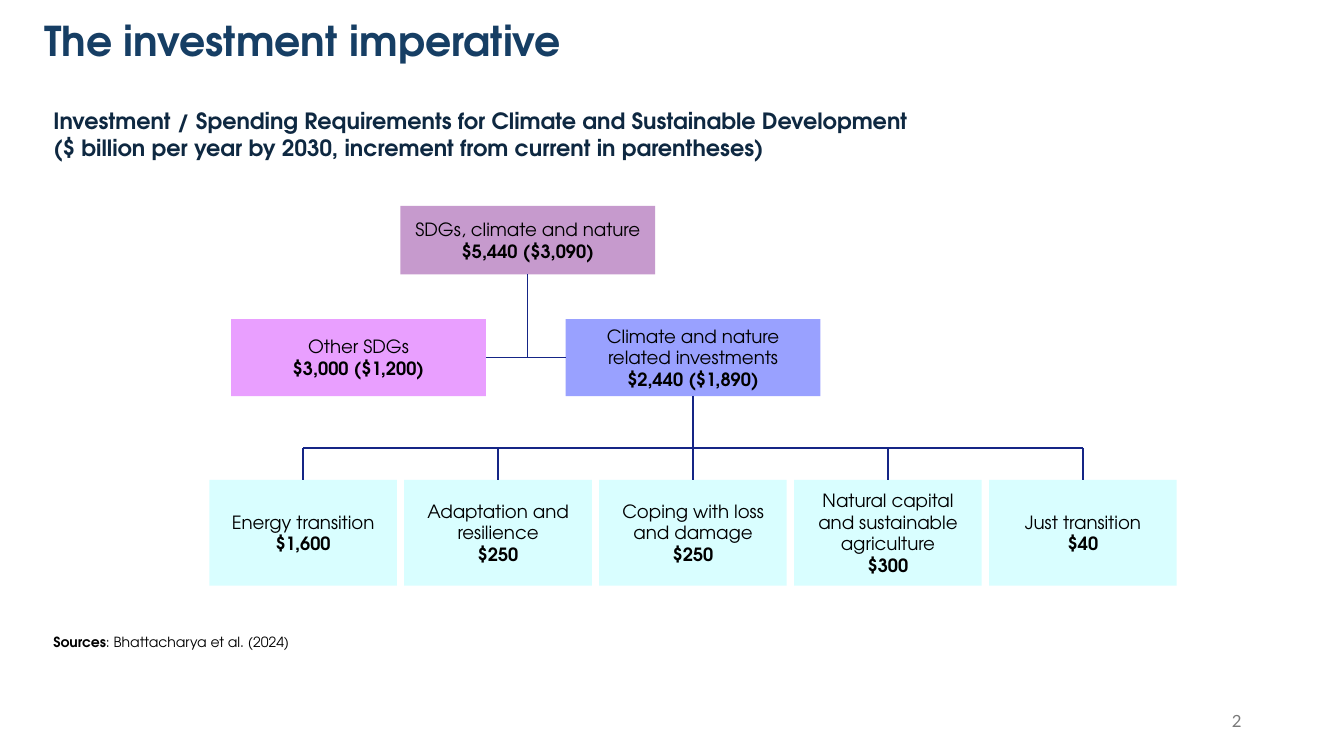
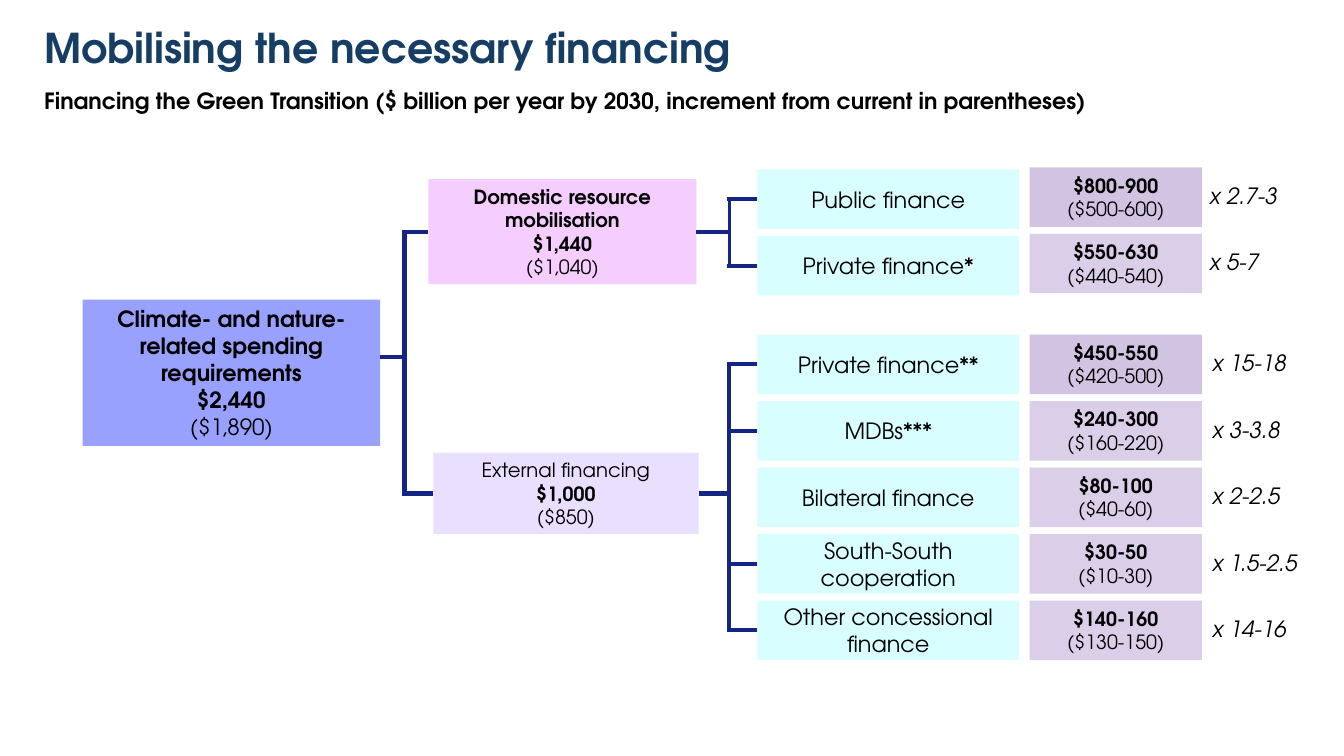
"""Build two slides on climate investment needs and their financing."""
from lxml import etree
from pptx import Presentation
from pptx.dml.color import RGBColor
from pptx.enum.shapes import MSO_CONNECTOR, MSO_SHAPE
from pptx.enum.text import MSO_ANCHOR, MSO_AUTO_SIZE, PP_ALIGN
from pptx.oxml.ns import qn
from pptx.util import Pt

RECT, STRAIGHT = MSO_SHAPE.RECTANGLE, MSO_CONNECTOR.STRAIGHT
LEFT, CENTER, RIGHT = PP_ALIGN.LEFT, PP_ALIGN.CENTER, PP_ALIGN.RIGHT
TOP, MIDDLE = MSO_ANCHOR.TOP, MSO_ANCHOR.MIDDLE
BOTTOM_SIDE, LEFT_SIDE, RIGHT_SIDE, TOP_SIDE = 2, 1, 3, 0

COLORS = {
    "title": "163E64", "subtitle": "0E2841", "text": "000000",
    "number": "797979", "line": "152586", "blue": "0015FF",
    "plum": "720384", "magenta": "C90FFF", "cyan": "4DFBFF",
    "pink": "D83CFF", "lilac": "AB82FF", "purple": "521B93",
}
FONT, NUMBER_FONT = "TeX Gyre Adventor", "Lato"
PLAIN, BOLD, ITALIC = {"bold": False}, {"bold": True}, {"italic": True}


def box(s, at, paragraphs, size, fill=None, alpha=100, align=CENTER,
        anchor=MIDDLE, color="text", font=FONT):
    at = [Pt(v) for v in at]
    if fill:
        sp = s.shapes.add_shape(RECT, *at)
        sp.shadow.inherit = False
        sp.line.fill.background()
        sp.fill.solid()
        sp.fill.fore_color.rgb = RGBColor.from_string(COLORS[fill])
        srgb = sp.fill._xPr.find(".//" + qn("a:srgbClr"))
        etree.SubElement(srgb, qn("a:alpha"), val=str(alpha * 1000))
    else:
        sp = s.shapes.add_textbox(*at)
    tf = sp.text_frame
    tf.word_wrap = True
    tf.vertical_anchor = anchor
    for i, runs in enumerate(paragraphs):
        p = tf.add_paragraph() if i else tf.paragraphs[0]
        p.alignment = align
        for text, style in runs:
            r = p.add_run()
            r.text = text
            r.font.color.rgb = RGBColor.from_string(COLORS[color])
            for key, value in {"name": font, "size": Pt(size), **style}.items():
                setattr(r.font, key, value)
    return sp


def connect(s, start, end, width, begin=None, finish=None):
    line = s.shapes.add_connector(STRAIGHT, *[Pt(v) for v in (*start, *end)])
    line.line.color.rgb = RGBColor.from_string(COLORS["line"])
    line.line.width = Pt(width)
    etree.SubElement(line._element.spPr, qn("a:effectLst"))
    if begin:
        line.begin_connect(*begin)
    if finish:
        line.end_connect(*finish)


prs = Presentation()
prs.slide_width, prs.slide_height = Pt(960), Pt(540)

slides = []
for title, top in [("The investment imperative", 11.5),
                   ("Mobilising the necessary financing", 16.5)]:
    s = prs.slides.add_slide(prs.slide_layouts[5])
    sp = s.shapes.title
    sp.left, sp.top, sp.width, sp.height = Pt(24.5), Pt(top), Pt(906), Pt(39)
    tf = sp.text_frame
    tf.auto_size = MSO_AUTO_SIZE.NONE
    tf.vertical_anchor = MIDDLE
    p = tf.paragraphs[0]
    p.alignment, p.line_spacing = LEFT, 0.9
    r = p.add_run()
    r.text = title
    r.font.color.rgb = RGBColor.from_string(COLORS["title"])
    for key, value in {"name": FONT, "size": Pt(29.3), "bold": True}.items():
        setattr(r.font, key, value)
    slides.append(s)
needs, financing = slides

box(needs, (31, 72.7, 916, 46),
    [[("Investment / Spending Requirements for Climate and Sustainable Development", BOLD)],
     [("($ billion per year by 2030, increment from current in parentheses)", BOLD)]],
    16, align=LEFT, anchor=TOP, color="subtitle")
box(needs, (31, 449.3, 402, 19.4),
    [[("Sources", BOLD), (": Bhattacharya et al. (2024)", PLAIN)]],
    10, align=LEFT, anchor=TOP)
box(needs, (678, 500.4, 216, 28.8), [[("2", PLAIN)]], 12,
    align=RIGHT, color="number", font=NUMBER_FONT)

needs_boxes = []
for name, amount, at, fill in [
    ("SDGs, climate and nature", "$5,440 ($3,090)", (286, 147, 182, 49), "plum"),
    ("Other SDGs", "$3,000 ($1,200)", (165, 228, 182, 55), "magenta"),
    ("Climate and nature related investments", "$2,440 ($1,890)",
     (404, 228, 182, 55), "blue"),
]:
    needs_boxes.append(box(needs, at, [[(name, PLAIN)], [(amount, BOLD)]],
                           13, fill, 40))
total, other, climate = needs_boxes
connect(needs, (377, 196), (377, 255.5), 1, (total, BOTTOM_SIDE))
connect(needs, (347, 255.5), (404, 255.5), 1,
        (other, RIGHT_SIDE), (climate, LEFT_SIDE))

areas = [
    ("Energy transition", "$1,600"),
    ("Adaptation and resilience", "$250"),
    ("Coping with loss and damage", "$250"),
    ("Natural capital and sustainable agriculture", "$300"),
    ("Just transition", "$40"),
]
area_left, area_top, area_width, area_pitch, bus_y = 149.5, 342.7, 134, 139.25, 320
centers = [area_left + i * area_pitch + area_width / 2 for i in range(len(areas))]
for (name, amount), x in zip(areas, centers):
    area = box(needs, (x - area_width / 2, area_top, area_width, 75.6),
               [[(name, PLAIN)], [(amount, BOLD)]], 13, "cyan", 21)
    connect(needs, (x, bus_y), (x, area_top), 1, finish=(area, TOP_SIDE))
connect(needs, (centers[0], bus_y), (centers[-1], bus_y), 1)
connect(needs, (495, 283), (495, bus_y), 1, (climate, BOTTOM_SIDE))

box(financing, (24.5, 58.5, 932, 26.6),
    [[("Financing the Green Transition ($ billion per year by 2030, "
       "increment from current in parentheses)", BOLD)]],
    16, align=LEFT, anchor=TOP)
box(financing, (59, 214, 212.5, 104.5),
    [[("Climate- and nature-related spending requirements", BOLD)],
     [("$2,440", BOLD)], [("($1,890)", PLAIN)]], 16, "blue", 40)

groups = [
    {"name": "Domestic resource mobilisation", "style": BOLD, "amount": "$1,440",
     "rise": "($1,040)", "at": (306, 128, 191.5, 75), "fill": "pink",
     "top": 121, "amount_shift": -1.5, "factor_left": 857, "factor_shift": 5.5,
     "spine": 2.25,
     "rows": [("Public finance", "$800-900", "($500-600)", "x 2.7-3"),
              ("Private finance*", "$550-630", "($440-540)", "x 5-7")]},
    {"name": "External financing", "style": PLAIN, "amount": "$1,000",
     "rise": "($850)", "at": (309.5, 323.5, 189.5, 58), "fill": "lilac",
     "top": 239, "amount_shift": 0, "factor_left": 859, "factor_shift": 7,
     "spine": 3,
     "rows": [("Private finance**", "$450-550", "($420-500)", "x 15-18"),
              ("MDBs***", "$240-300", "($160-220)", "x 3-3.8"),
              ("Bilateral finance", "$80-100", "($40-60)", "x 2-2.5"),
              ("South-South cooperation", "$30-50", "($10-30)", "x 1.5-2.5"),
              ("Other concessional finance", "$140-160", "($130-150)", "x 14-16")]},
]
unbranched = "Bilateral finance"
row_left, row_height, row_pitch = 541, 42.5, 47.5
trunk_x, spine_x, half_line = 289, 521, 1.5
group_centers = []
for g in groups:
    left, top, width, height = g["at"]
    middle = top + height / 2
    group_centers.append(middle)
    group = box(financing, g["at"],
                [[(g["name"], g["style"])], [(g["amount"], BOLD)], [(g["rise"], PLAIN)]],
                14, g["fill"], 25)
    connect(financing, (trunk_x - half_line, middle), (left, middle), 3,
            finish=(group, LEFT_SIDE))
    connect(financing, (left + width, middle), (spine_x, middle), 3,
            (group, RIGHT_SIDE))
    row_centers = []
    for i, (name, amount, rise, factor) in enumerate(g["rows"]):
        y = g["top"] + i * row_pitch
        row_centers.append(y + row_height / 2)
        row = box(financing, (row_left, y, 187, row_height), [[(name, PLAIN)]],
                  16, "cyan", 21)
        box(financing, (735.5, y + g["amount_shift"], 123, row_height),
            [[(amount, BOLD)], [(rise, PLAIN)]], 14, "purple", 21 if i else 26)
        box(financing, (g["factor_left"], y + g["factor_shift"], 100, 26.6),
            [[(factor, ITALIC)]], 16, align=LEFT, anchor=TOP)
        if name != unbranched:
            connect(financing, (spine_x - half_line, row_centers[-1]),
                    (row_left, row_centers[-1]), 3, finish=(row, LEFT_SIDE))
    connect(financing, (spine_x, row_centers[0]), (spine_x, row_centers[-1]), g["spine"])
connect(financing, (271.5, 255), (trunk_x, 255), 3)
connect(financing, (trunk_x, group_centers[0]), (trunk_x, group_centers[1]), 3)

prs.save("out.pptx")
